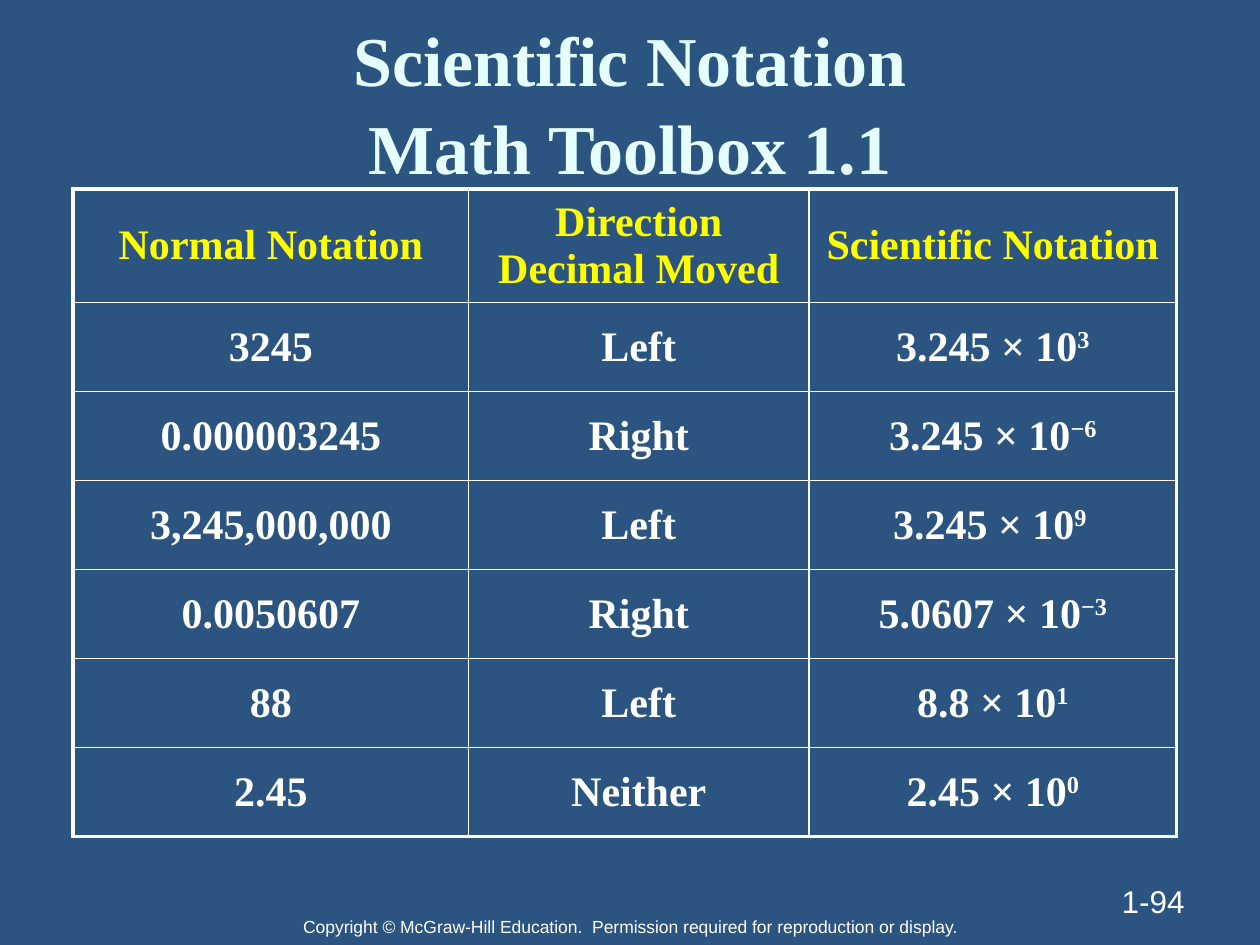
import pptx
import pptx.dml.color
import pptx.enum.text
import pptx.oxml.ns
import pptx.util
from lxml import etree

RGBColor = pptx.dml.color.RGBColor
PP_ALIGN = pptx.enum.text.PP_ALIGN
MSO_ANCHOR = pptx.enum.text.MSO_ANCHOR
Inches = pptx.util.Inches
Pt = pptx.util.Pt
qn = pptx.oxml.ns.qn

NAVY = RGBColor(0x2B, 0x54, 0x81)
ICE = RGBColor(0xE5, 0xFF, 0xFF)
YELLOW = RGBColor(0xFF, 0xFF, 0x00)
WHITE = RGBColor(0xFF, 0xFF, 0xFF)

SLIDE_W, SLIDE_H = Inches(10), Inches(7.5)
THIN, THICK = Pt(1), Pt(2.25)

TITLE = {"name": "Times New Roman", "size": Pt(40), "bold": True}
CELL = {"name": "Times New Roman", "size": Pt(24), "bold": True}
NUMBER = {"name": "Arial", "size": Pt(18), "bold": False}
FOOTER = {"name": "Arial", "size": Pt(10), "bold": False}

HEADERS = ["Normal Notation", "Direction Decimal Moved", "Scientific Notation"]
EXAMPLES = [
    ("3245", "Left", "3.245", "3"),
    ("0.000003245", "Right", "3.245", "−6"),
    ("3,245,000,000", "Left", "3.245", "9 "),
    ("0.0050607", "Right", "5.0607", "−3"),
    ("88", "Left", "8.8", "1"),
    ("2.45", "Neither", "2.45", "0"),
]
TABLE_LEFT, TABLE_TOP, TABLE_H = Inches(0.58), Inches(1.5), Inches(5.14)
COL_WIDTHS = [Inches(3.14), Inches(2.7), Inches(2.92)]
HEADER_H = Inches(0.9)


def add_run(p, text, style, color):
    r = p.add_run()
    r.text = text
    for name, value in style.items():
        setattr(r.font, name, value)
    r.font.color.rgb = color
    return r


def add_text(slide, box, lines, style, color, align, anchor, spacing=None):
    x, y, w, h = box
    sp = slide.shapes.add_textbox(
        int(SLIDE_W * x), int(SLIDE_H * y), int(SLIDE_W * w), int(SLIDE_H * h))
    tf = sp.text_frame
    tf.word_wrap = True
    tf.vertical_anchor = anchor
    p = tf.paragraphs[0]
    p.alignment = align
    p.line_spacing = spacing
    for i, line in enumerate(lines):
        if i:
            p.add_line_break()
        add_run(p, line, style, color)


def set_borders(cell, widths):
    tcPr = cell._tc.get_or_add_tcPr()
    for side, width in widths.items():
        ln = etree.SubElement(tcPr, qn(f"a:ln{side}"), w=str(width))
        fill = etree.SubElement(ln, qn("a:solidFill"))
        etree.SubElement(fill, qn("a:srgbClr"), val=str(WHITE))


def fill_cell(cell, text, color, exponent=None):
    cell.vertical_anchor = MSO_ANCHOR.MIDDLE
    p = cell.text_frame.paragraphs[0]
    p.alignment = PP_ALIGN.CENTER
    add_run(p, text, CELL, color)
    if exponent:
        r = add_run(p, exponent, CELL, color)
        r._r.get_or_add_rPr().set("baseline", "30000")


def add_notation_table(slide):
    n_rows, n_cols = len(EXAMPLES) + 1, len(HEADERS)
    table = slide.shapes.add_table(
        n_rows, n_cols, TABLE_LEFT, TABLE_TOP, sum(COL_WIDTHS), TABLE_H).table
    table.first_row = table.horz_banding = False
    for col, width in zip(table.columns, COL_WIDTHS):
        col.width = width
    for i, row in enumerate(table.rows):
        row.height = (TABLE_H - HEADER_H) // len(EXAMPLES) if i else HEADER_H
        for j, cell in enumerate(row.cells):
            set_borders(cell, {
                "L": THIN if j else THICK,
                "R": THICK if j == n_cols - 1 else THIN,
                "T": THIN if i else THICK,
                "B": THICK if i == n_rows - 1 else THIN,
            })
            cell.fill.background()
    for j, header in enumerate(HEADERS):
        fill_cell(table.cell(0, j), header, YELLOW)
    for i, (normal, direction, factor, exponent) in enumerate(EXAMPLES, 1):
        fill_cell(table.cell(i, 0), normal, WHITE)
        fill_cell(table.cell(i, 1), direction, WHITE)
        fill_cell(table.cell(i, 2), f"{factor} × 10", WHITE, exponent)


def main():
    prs = pptx.Presentation()
    prs.slide_width, prs.slide_height = SLIDE_W, SLIDE_H
    s = prs.slides.add_slide(prs.slide_layouts[6])
    s.background.fill.solid()
    s.background.fill.fore_color.rgb = NAVY
    add_text(s, (0, 0.963, 1, 0.037),
             ["Copyright © McGraw-Hill Education.  Permission required for reproduction or display."],
             FOOTER, WHITE, PP_ALIGN.CENTER, MSO_ANCHOR.TOP)
    add_text(s, (0.717, 0.911, 0.233, 0.069), ["1-94"],
             NUMBER, WHITE, PP_ALIGN.RIGHT, MSO_ANCHOR.BOTTOM)
    add_text(s, (0.05, 0.023, 0.9, 0.167), ["Scientific Notation", "Math Toolbox 1.1"],
             TITLE, ICE, PP_ALIGN.CENTER, MSO_ANCHOR.MIDDLE, 1.05)
    add_notation_table(s)
    prs.save("out.pptx")


if __name__ == "__main__":
    main()
